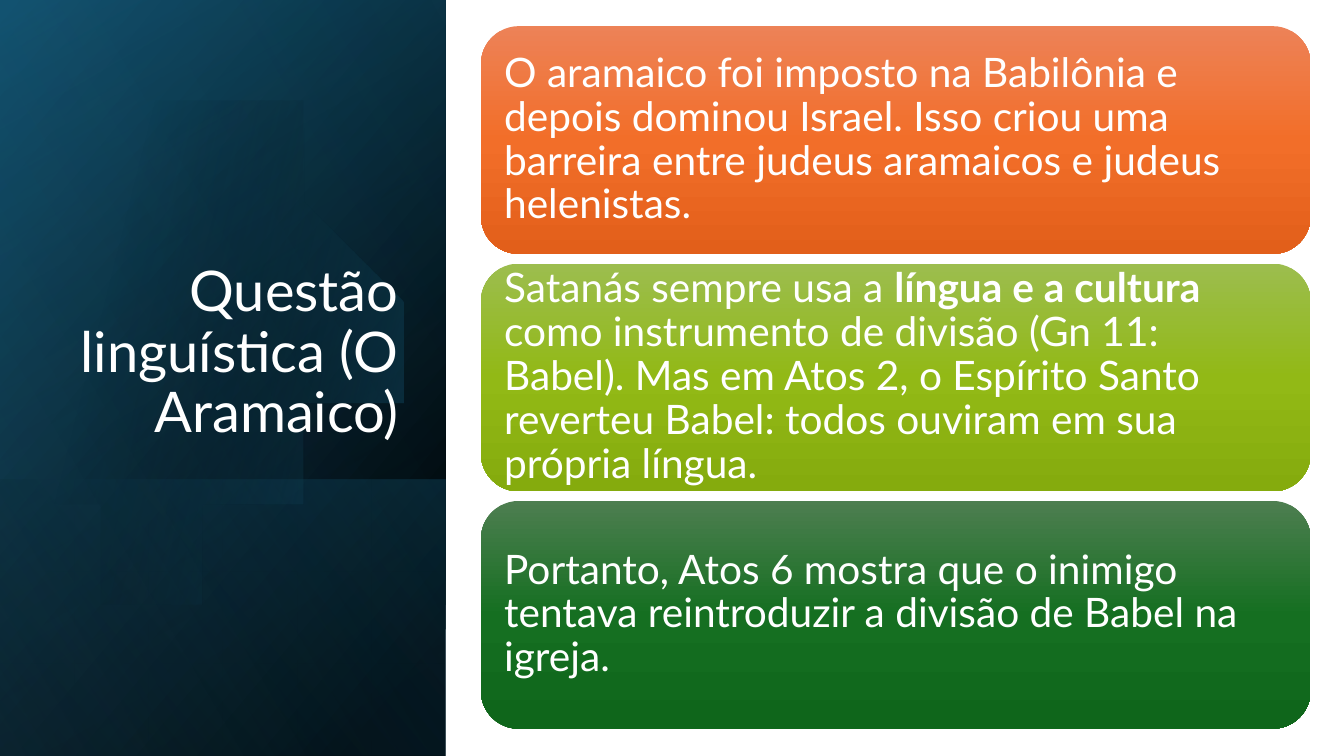
import pptx
import pptx.util
import pptx.dml.color
import pptx.enum.shapes
import pptx.enum.text
import pptx.oxml.ns
from lxml import etree

Inches = pptx.util.Inches
Shape = pptx.enum.shapes.MSO_SHAPE
Anchor = pptx.enum.text.MSO_ANCHOR
Align = pptx.enum.text.PP_ALIGN
qn = pptx.oxml.ns.qn

COLORS = {
    "white": "FFFFFF", "black": "000000",
    "navy": "104862", "teal": "156082", "sky": "46B1E1",
    "orange_light": "ED8257", "orange": "F26E29", "orange_dark": "E25F1A",
    "lime_light": "9CBD4E", "lime": "92B916", "lime_dark": "85AB0D",
    "green_light": "4D7E50", "green": "156F21", "green_dark": "0F661B",
}


def write_text(frame, runs, size, font="Lato", color="white", align=Align.LEFT,
               anchor=Anchor.MIDDLE, insets=(0.1, 0.05)):
    """Fill a text frame with one paragraph of (text, bold) runs."""
    frame.word_wrap = True
    frame.vertical_anchor = anchor
    frame.margin_left = frame.margin_right = Inches(insets[0])
    frame.margin_top = frame.margin_bottom = Inches(insets[1])
    paragraph = frame.paragraphs[0]
    paragraph.alignment = align
    paragraph.line_spacing = 0.9
    for text, bold in runs:
        run = paragraph.add_run()
        run.text = text
        run.font.name = font
        run.font.size = pptx.util.Pt(size)
        run.font.bold = bold
        run.font.color.rgb = pptx.dml.color.RGBColor.from_string(COLORS[color])


def curve_points(start, curves, steps=24):
    """Sample a chain of cubic Bezier curves."""
    points = [start]
    for p1, p2, p3 in curves:
        p0 = points[-1]
        for step in range(1, steps + 1):
            t = step / steps
            u = 1 - t
            points.append(tuple(
                u**3 * a + 3 * u * u * t * b + 3 * u * t * t * c + t**3 * d
                for a, b, c, d in zip(p0, p1, p2, p3)))
    return points


class SlideBuilder:
    def __init__(self, slide):
        self.shapes = slide.shapes

    def paint(self, shape, stops, angle):
        """Gradient of (position %, colour, opacity %) stops, clockwise angle."""
        shape.shadow.inherit = False
        shape.line.fill.background()
        shape.fill.gradient()
        gradient = shape._element.spPr.find(qn("a:gradFill"))
        stop_list = gradient.find(qn("a:gsLst"))
        for old_stop in list(stop_list):
            stop_list.remove(old_stop)
        for position, color, opacity in stops:
            stop = etree.SubElement(stop_list, qn("a:gs"), pos=str(position * 1000))
            tint = etree.SubElement(stop, qn("a:srgbClr"), val=COLORS[color])
            if opacity < 100:
                etree.SubElement(tint, qn("a:alpha"), val=str(opacity * 1000))
        gradient.find(qn("a:lin")).set("ang", str(angle * 60000))

    def panel_layer(self, top, height, stops, angle):
        """Layer across the side panel, mirrored and turned a quarter."""
        left = (PANEL_WIDTH - height) / 2
        layer = self.shapes.add_shape(
            Shape.RECTANGLE, Inches(left), Inches(top + (height - PANEL_WIDTH) / 2),
            Inches(height), Inches(PANEL_WIDTH))
        layer.rotation = 90
        layer._element.spPr.find(qn("a:xfrm")).set("flipH", "1")
        self.paint(layer, stops, angle)

    def outline(self, points, stops, angle):
        builder = self.shapes.build_freeform(*points[0], scale=Inches(1))
        builder.add_line_segments(points[1:], close=True)
        self.paint(builder.convert_to_shape(), stops, angle)

    def title(self, left, top, width, height, text):
        box = self.shapes.add_textbox(*map(Inches, (left, top, width, height)))
        write_text(box.text_frame, [(text, False)], 40,
                   align=Align.RIGHT, anchor=Anchor.BOTTOM)

    def card(self, left, top, width, height, hue, runs):
        card = self.shapes.add_shape(
            Shape.ROUNDED_RECTANGLE, *map(Inches, (left, top, width, height)))
        self.paint(card, [(0, hue + "_light", 100), (50, hue, 100),
                          (100, hue + "_dark", 100)], 90)
        write_text(card.text_frame, runs, 29, insets=(0.12, 0.12))


SLIDE_HEIGHT = 7.5
PANEL_WIDTH = 4.42
CARD_TOP, CARD_HEIGHT, CARD_PITCH = 0.26, 2.26, 2.355

CARDS = [
    ("orange", [("O aramaico foi imposto na Babilônia e depois dominou Israel. "
                 "Isso criou uma barreira entre judeus aramaicos e judeus "
                 "helenistas.", False)]),
    ("lime", [("Satanás sempre usa a ", False),
              ("língua e a cultura", True),
              (" como instrumento de divisão (Gn 11: Babel). Mas em Atos 2, "
               "o Espírito Santo reverteu Babel: todos ouviram em sua "
               "própria língua.", False)]),
    ("green", [("Portanto, Atos 6 mostra que o inimigo tentava reintroduzir "
                "a divisão de Babel na igreja.", False)]),
]


def main():
    deck = pptx.Presentation()
    deck.slide_width, deck.slide_height = Inches(13.33), Inches(SLIDE_HEIGHT)
    page = SlideBuilder(deck.slides.add_slide(deck.slide_layouts[6]))

    # Side panel: dark base and translucent glows
    page.panel_layer(0, SLIDE_HEIGHT, [(8, "black", 100), (100, "navy", 100)], 50)
    page.panel_layer(0, SLIDE_HEIGHT, [(0, "black", 0), (99, "teal", 46)], 30)
    page.panel_layer(4.76, 2.74, [(2, "teal", 29), (100, "black", 30)], 130)

    # Disc cut off by the slide's left edge
    disc = curve_points((1.49, 1.1), [
        ((2.46, 1.12), (3.35, 1.77), (3.63, 2.75)),
        ((3.98, 3.97), (3.28, 5.23), (2.07, 5.58)),
        ((1.31, 5.8), (0.53, 5.61), (0, 5.16)),
    ]) + curve_points((0, 1.61), [
        ((0.23, 1.42), (0.5, 1.28), (0.8, 1.19)),
        ((1.03, 1.13), (1.26, 1.1), (1.49, 1.1)),
    ])
    page.outline(disc, [(29, "black", 0), (100, "teal", 43)], 14)
    page.panel_layer(0, SLIDE_HEIGHT, [(0, "black", 0), (99, "sky", 11)], 120)

    # Title
    page.title(0.64, 1.84, 3.41, 2.62, "Questão linguística (O Aramaico)")

    # Stacked cards
    for row, (hue, runs) in enumerate(CARDS):
        page.card(4.77, CARD_TOP + row * CARD_PITCH, 8.23, CARD_HEIGHT, hue, runs)

    deck.save("out.pptx")


if __name__ == "__main__":
    main()
